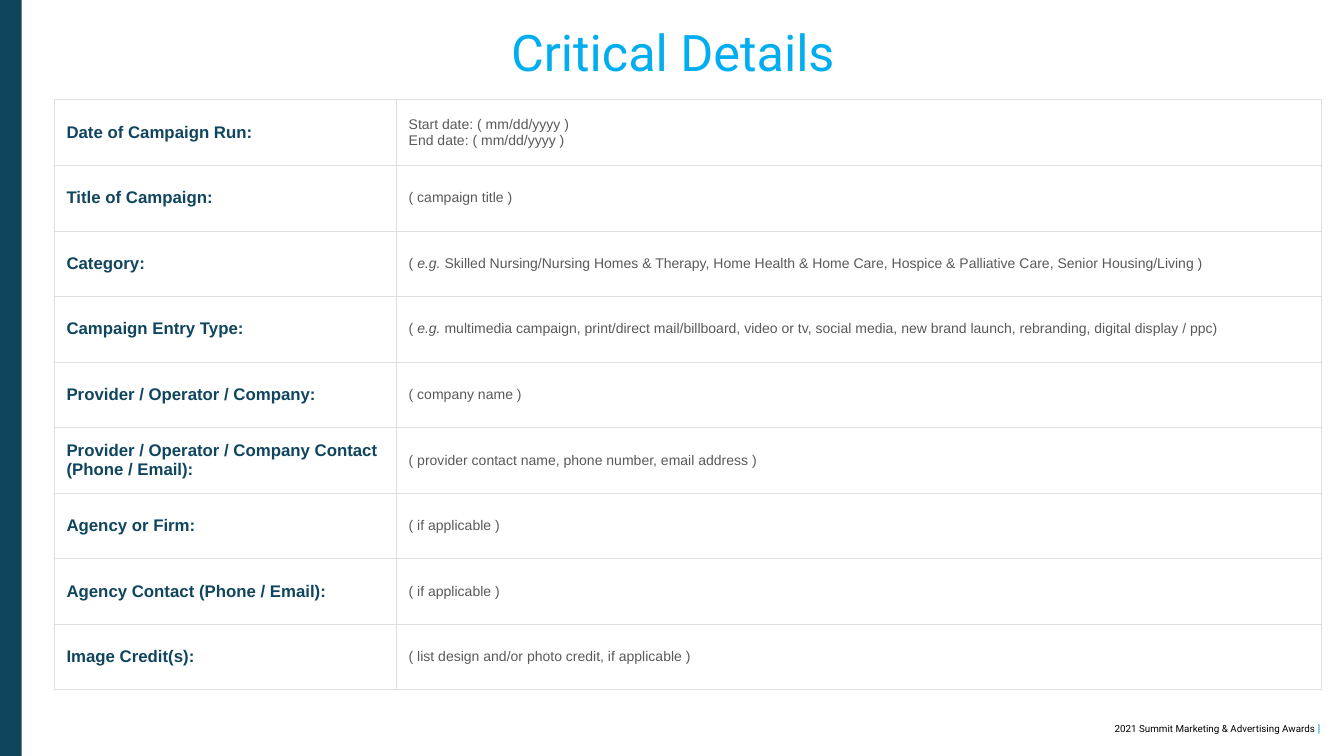
from dataclasses import dataclass

from lxml.etree import SubElement
from pptx import Presentation
from pptx.dml.color import RGBColor
from pptx.enum.shapes import MSO_SHAPE
from pptx.enum.text import MSO_ANCHOR, PP_ALIGN
from pptx.oxml.ns import qn
from pptx.slide import Slide
from pptx.table import _Cell
from pptx.text.text import _Paragraph
from pptx.util import Inches, Pt

COLORS = {
    "navy": "10455E",
    "sky": "00AEEF",
    "blue": "009CDB",
    "gray": "595959",
    "line": "DFDFDF",
    "black": "000000",
}


@dataclass
class Row:
    label: str
    lines: list[str]
    lead: str = ""


ROWS = [
    Row("Date of Campaign Run:",
        ["Start date: ( mm/dd/yyyy )", "End date: ( mm/dd/yyyy )"]),
    Row("Title of Campaign:", ["( campaign title )"]),
    Row("Category:",
        ["Skilled Nursing/Nursing Homes & Therapy, Home Health & Home Care, "
         "Hospice & Palliative Care, Senior Housing/Living )"], "e.g. "),
    Row("Campaign Entry Type:",
        ["multimedia campaign, print/direct mail/billboard, video or tv, "
         "social media, new brand launch, rebranding, digital display / ppc)"], "e.g. "),
    Row("Provider / Operator / Company:", ["( company name )"]),
    Row("Provider / Operator / Company Contact (Phone / Email):",
        ["( provider contact name, phone number, email address )"]),
    Row("Agency or Firm:", ["( if applicable )"]),
    Row("Agency Contact (Phone / Email):", ["( if applicable )"]),
    Row("Image Credit(s):", ["( list design and/or photo credit, if applicable )"]),
]


def add_text(para: _Paragraph, text: str, *, size: int, color: str,
             font: str = "Arial", bold: bool = False, italic: bool = False) -> None:
    run = para.add_run()
    run.text = text
    run.font.name = font
    run.font.size = Pt(size)
    run.font.bold = bold
    run.font.italic = italic
    run.font.color.rgb = RGBColor.from_string(COLORS[color])


def set_frame(frame, wrap: bool = True) -> None:
    frame.word_wrap = wrap
    frame.vertical_anchor = MSO_ANCHOR.MIDDLE
    frame.margin_left = frame.margin_right = Inches(0.06)
    frame.margin_top = frame.margin_bottom = Inches(0.06)


def style_cell(cell: _Cell) -> None:
    props = cell._tc.get_or_add_tcPr()
    for side in ("lnL", "lnR", "lnT", "lnB"):
        line = SubElement(props, qn(f"a:{side}"), w=str(Pt(1)))
        fill = SubElement(line, qn("a:solidFill"))
        SubElement(fill, qn("a:srgbClr"), val=COLORS["line"])
    cell.fill.background()
    cell.vertical_anchor = MSO_ANCHOR.MIDDLE
    cell.margin_left, cell.margin_right = Inches(0.25), Inches(0.1)
    cell.margin_top = cell.margin_bottom = Inches(0.05)


def draw_bar(slide: Slide) -> None:
    bar = slide.shapes.add_shape(MSO_SHAPE.RECTANGLE, 0, 0, Inches(0.43), Inches(15))
    bar.shadow.inherit = False
    bar.fill.solid()
    bar.fill.fore_color.rgb = RGBColor.from_string(COLORS["navy"])
    bar.line.fill.background()


def draw_title(slide: Slide) -> None:
    title = slide.shapes.title
    title.left, title.top = Inches(-0.29), Inches(0.4)
    title.width, title.height = Inches(27.29), Inches(1.22)
    set_frame(title.text_frame)
    para = title.text_frame.paragraphs[0]
    para.alignment = PP_ALIGN.CENTER
    add_text(para, "Critical Details", size=72, color="sky", font="Roboto")


def draw_table(slide: Slide, rows: list[Row]) -> None:
    high = Inches(1.3)
    table = slide.shapes.add_table(len(rows), 2, Inches(1.07), Inches(1.98),
                                   Inches(25.15), high * len(rows)).table
    table.first_row = table.horz_banding = False
    for col, wide in zip(table.columns, (6.79, 18.36)):
        col.width = Inches(wide)
    for index, row in enumerate(rows):
        table.rows[index].height = high
        name, value = table.cell(index, 0), table.cell(index, 1)
        style_cell(name)
        style_cell(value)
        add_text(name.text_frame.paragraphs[0], row.label,
                 size=24, color="navy", bold=True)
        frame = value.text_frame
        for place, line in enumerate(row.lines):
            para = frame.add_paragraph() if place else frame.paragraphs[0]
            if row.lead:
                add_text(para, "( ", size=20, color="gray")
                add_text(para, row.lead, size=20, color="gray", italic=True)
            add_text(para, line, size=20, color="gray")


def draw_footer(slide: Slide) -> None:
    box = slide.shapes.add_textbox(Inches(21.91), Inches(14.26), Inches(4.41), Inches(0.38))
    set_frame(box.text_frame, wrap=False)
    para = box.text_frame.paragraphs[0]
    para.alignment = PP_ALIGN.RIGHT
    add_text(para, "2021 Summit Marketing & Advertising Awards ",
             size=14, color="black", font="Roboto")
    add_text(para, "| ", size=16, color="blue", font="Roboto", bold=True)


def main() -> None:
    deck = Presentation()
    deck.slide_width, deck.slide_height = Inches(26.67), Inches(15)
    slide = deck.slides.add_slide(deck.slide_layouts[5])
    draw_bar(slide)
    draw_footer(slide)
    draw_title(slide)
    draw_table(slide, ROWS)
    deck.save("out.pptx")


if __name__ == "__main__":
    main()
